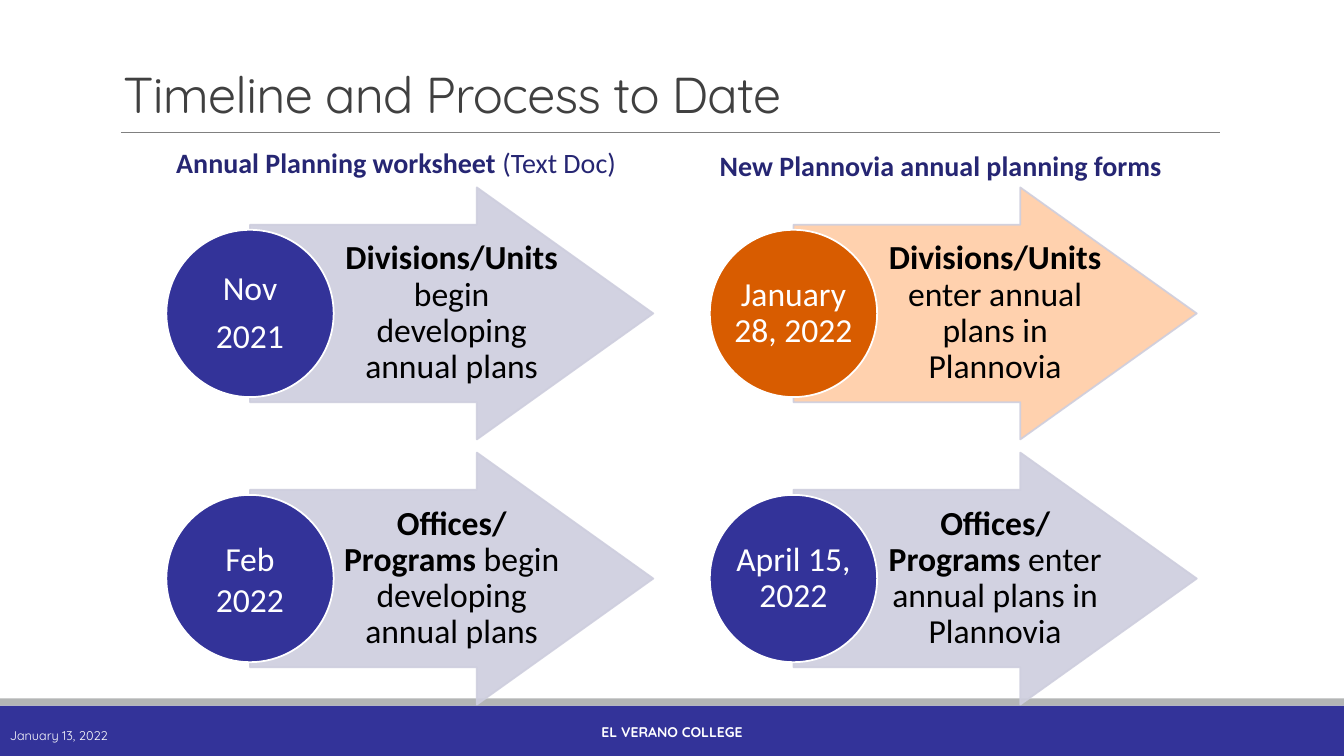
from pptx import Presentation
from pptx.dml.color import RGBColor
from pptx.enum.shapes import MSO_CONNECTOR, MSO_SHAPE
from pptx.enum.text import MSO_ANCHOR, MSO_AUTO_SIZE, PP_ALIGN
from pptx.oxml.ns import qn
from pptx.oxml.xmlchemy import OxmlElement
from pptx.util import Inches, Pt

RECTANGLE, OVAL = MSO_SHAPE.RECTANGLE, MSO_SHAPE.OVAL
STRAIGHT = MSO_CONNECTOR.STRAIGHT
MIDDLE, BOTTOM = MSO_ANCHOR.MIDDLE, MSO_ANCHOR.BOTTOM
LEFT, CENTER = PP_ALIGN.LEFT, PP_ALIGN.CENTER
NO_AUTOFIT = MSO_AUTO_SIZE.NONE

TITLE = "Timeline and Process to Date"
DATE = "January 13, 2022"
COLLEGE = "EL VERANO COLLEGE"

# Each heading: left, top, runs of (text, bold)
HEADINGS = [
    (1.65, 1.39, [("Annual Planning worksheet ", True), ("(Text Doc)", False)]),
    (7.04, 1.42, [("New Plannovia annual planning forms", True)]),
]

# Each step: row, column, date lines, who, action, style, tight date lines
STEPS = [
    (0, 0, ["Nov", "2021"], "Divisions/Units ", "begin developing annual plans", "plain", False),
    (0, 1, ["January 28, 2022"], "Divisions/Units ", "enter annual plans in Plannovia", "current", False),
    (1, 0, ["Feb", "2022"], "Offices/ Programs ", "begin developing annual plans", "plain", True),
    (1, 1, ["April 15, 2022"], "Offices/ Programs ", "enter annual plans in Plannovia", "plain", False),
]

THEME = {
    "title_font": "Quicksand", "body_font": "Calibri",
    "title_size": 36, "heading_size": 20, "step_size": 24, "date_size": 9, "college_size": 10,
    "title": "404040", "heading": "262673", "text": "000000", "white": "FFFFFF",
    "bar": "333399", "strip": "B3B5B5", "rule": "808080", "arrow_line": "CECEDE",
    "plain": {"arrow": "CECEDE", "circle": "333399"},
    "current": {"arrow": "FFCCA6", "circle": "D85C00"},
}

GRID_LEFT, GRID_TOP, COLUMN_PITCH, ROW_PITCH = 2.48, 1.86, 5.39, 2.63
ARROW_WIDTH, ARROW_HEIGHT, HEAD_LENGTH, SHAFT_INSET = 4, 2.5, 1.75, 0.37
CIRCLE_SIZE = 1.66
ARROW_OPACITY = 90


def color(name):
    return RGBColor.from_string(THEME.get(name, name))


def paint(shape, fill, line=None, line_width=1.25):
    shape.shadow.inherit = False
    shape.fill.solid()
    shape.fill.fore_color.rgb = color(fill)
    if line:
        shape.line.color.rgb = color(line)
        shape.line.width = Pt(line_width)
    else:
        shape.line.fill.background()


def set_opacity(shape, percent):
    """Apply one opacity to the fill and the outline."""
    for rgb in shape.element.spPr.iter(qn("a:srgbClr")):
        alpha = OxmlElement("a:alpha")
        alpha.set("val", str(percent * 1000))
        rgb.append(alpha)


def write(shape, paragraphs, font, size, font_color, align=LEFT, anchor=None,
          margins=None, line_spacing=None, space_after=None):
    """Fill a shape with paragraphs, each a list of (text, bold) runs."""
    frame = shape.text_frame
    frame.word_wrap = True
    frame.auto_size = NO_AUTOFIT
    if anchor is not None:
        frame.vertical_anchor = anchor
    if margins is not None:
        horizontal, vertical = margins
        frame.margin_left = frame.margin_right = Inches(horizontal)
        frame.margin_top = frame.margin_bottom = Inches(vertical)
    for index, runs in enumerate(paragraphs):
        paragraph = frame.paragraphs[0] if index == 0 else frame.add_paragraph()
        paragraph.alignment = align
        if line_spacing:
            paragraph.line_spacing = line_spacing
        if space_after:
            paragraph.space_after = Pt(space_after)
        for text, bold in runs:
            run = paragraph.add_run()
            run.text = text
            run.font.name = THEME[font]
            run.font.size = Pt(THEME[size])
            run.font.bold = bold
            run.font.color.rgb = color(font_color)


def add_text(slide, left, top, width, height, paragraphs, *style, **options):
    box = slide.shapes.add_textbox(Inches(left), Inches(top), Inches(width), Inches(height))
    write(box, paragraphs, *style, **options)


def add_frame(slide):
    """Draw the title, the rule under it and the footer."""
    for top, height, fill in [(7, 0.5, "bar"), (6.93, 0.07, "strip")]:
        band = slide.shapes.add_shape(RECTANGLE, 0, Inches(top), Inches(13.33), Inches(height))
        paint(band, fill)

    rule = slide.shapes.add_connector(STRAIGHT, Inches(1.2), Inches(1.31), Inches(12.1), Inches(1.31))
    rule.line.color.rgb = color("rule")
    rule.line.width = Pt(0.5)
    rule.element.spPr.append(OxmlElement("a:effectLst"))

    title = slide.shapes.title
    title.left, title.top, title.width, title.height = map(Inches, (1.12, 0.28, 11, 1))
    write(title, [[(TITLE, False)]], "title_font", "title_size", "title",
          anchor=BOTTOM, line_spacing=0.85)
    title.text_frame.paragraphs[0].runs[0].font._element.set("spc", "-50")

    add_text(slide, 0, 7.1, 2.7, 0.4, [[(DATE, False)]],
             "title_font", "date_size", "white", anchor=MIDDLE)
    add_text(slide, 4.03, 7.06, 5.27, 0.4, [[(COLLEGE, True)]],
             "title_font", "college_size", "white", align=CENTER, anchor=MIDDLE)


def add_arrow(slide, left, top, fill, who, action):
    """Draw an arrow whose text area spans its whole box, head included."""
    neck, tip = left + ARROW_WIDTH - HEAD_LENGTH, left + ARROW_WIDTH
    bottom, middle = top + ARROW_HEIGHT, top + ARROW_HEIGHT / 2
    shaft_top, shaft_bottom = top + SHAFT_INSET, bottom - SHAFT_INSET
    corners = [(left, shaft_top), (neck, shaft_top), (neck, top), (tip, middle),
               (neck, bottom), (neck, shaft_bottom), (left, shaft_bottom)]
    points = [(Inches(x), Inches(y)) for x, y in corners]
    builder = slide.shapes.build_freeform(*points[0])
    builder.add_line_segments(points[1:], close=True)
    arrow = builder.convert_to_shape()
    paint(arrow, fill, "arrow_line")
    set_opacity(arrow, ARROW_OPACITY)
    write(arrow, [[(who, True), (action, False)]], "body_font", "step_size", "text",
          align=CENTER, anchor=MIDDLE, margins=(0.9, 0.45), line_spacing=0.9)


def add_step(slide, row, column, date_lines, who, action, style, tight):
    left, top = GRID_LEFT + column * COLUMN_PITCH, GRID_TOP + row * ROW_PITCH
    add_arrow(slide, left, top, THEME[style]["arrow"], who, action)
    circle = slide.shapes.add_shape(
        OVAL, Inches(left - CIRCLE_SIZE / 2), Inches(top + (ARROW_HEIGHT - CIRCLE_SIZE) / 2),
        Inches(CIRCLE_SIZE), Inches(CIRCLE_SIZE))
    paint(circle, THEME[style]["circle"], "white")
    write(circle, [[(line, False)] for line in date_lines], "body_font", "step_size", "white",
          align=CENTER, anchor=MIDDLE, margins=(0, 0),
          line_spacing=1.0 if tight else 0.9, space_after=None if tight else 8.4)


def main():
    presentation = Presentation()
    presentation.slide_width, presentation.slide_height = Inches(13.33), Inches(7.5)
    slide = presentation.slides.add_slide(presentation.slide_layouts[5])
    add_frame(slide)
    for step in STEPS:
        add_step(slide, *step)
    for left, top, runs in HEADINGS:
        add_text(slide, left, top, 5.53, 0.44, [runs], "body_font", "heading_size", "heading")
    presentation.save("out.pptx")


if __name__ == "__main__":
    main()
